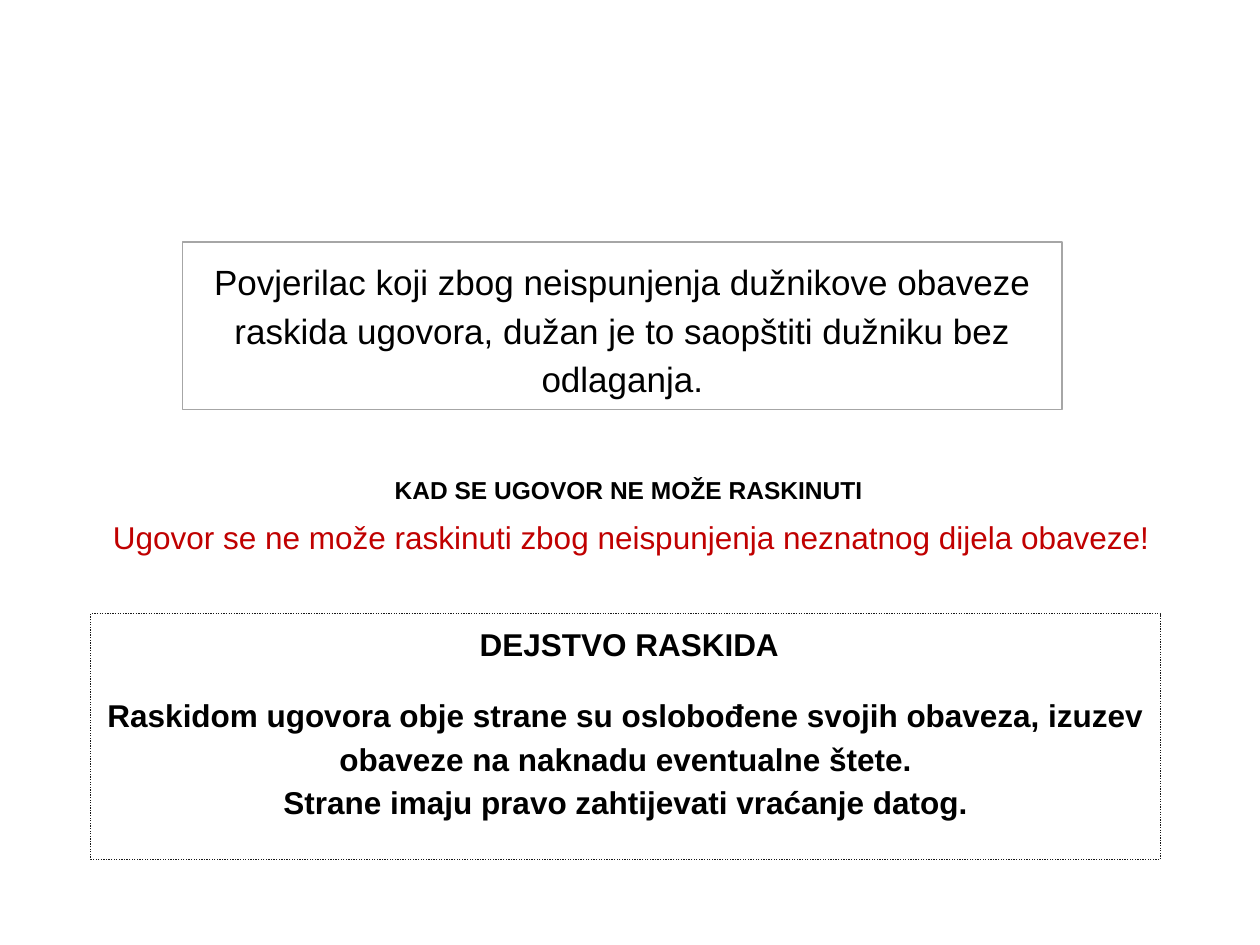
"""Build a slide on the termination of contracts."""
from dataclasses import dataclass

import pptx
import pptx.dml.color
import pptx.enum.dml
import pptx.enum.shapes
import pptx.enum.text
import pptx.oxml.ns
import pptx.util

Inches = pptx.util.Inches
Anchor = pptx.enum.text.MSO_ANCHOR


@dataclass(frozen=True)
class Theme:
    font: str = "Arial"
    ink: str = "000000"
    alert: str = "C00000"
    pale: str = "A6A6A6"
    dark: str = "191919"
    small: int = 14
    mid: int = 18
    large: int = 20
    line: float = 0.75
    inset: float = 0.1


@dataclass(frozen=True)
class Area:
    left: float
    top: float
    width: float
    height: float

    def lengths(self) -> list:
        return [Inches(n) for n in (self.left, self.top, self.width, self.height)]


THEME = Theme()


def tint(code: str):
    return pptx.dml.color.RGBColor.from_string(code)


def place(shape, area: Area) -> None:
    shape.left, shape.top, shape.width, shape.height = area.lengths()


def write(shape, *lines: str, size: int = THEME.mid, color: str = THEME.ink,
          bold: bool = False, anchor=Anchor.TOP, space: float = 1.15,
          head: float = THEME.inset) -> None:
    frame = shape.text_frame
    frame.word_wrap = True
    frame.auto_size = pptx.enum.text.MSO_AUTO_SIZE.NONE
    frame.vertical_anchor = anchor
    frame.margin_left = frame.margin_right = frame.margin_bottom = Inches(THEME.inset)
    frame.margin_top = Inches(head)
    frame.text = "\n".join(lines)
    for para in frame.paragraphs:
        para.alignment = pptx.enum.text.PP_ALIGN.CENTER
        para.line_spacing = space
        para.space_before = para.space_after = pptx.util.Pt(0)
        font = para.runs[0].font
        font.name, font.size, font.bold = THEME.font, pptx.util.Pt(size), bold
        font.color.rgb = tint(color)


def plain(shape) -> None:
    for para in shape.text_frame.paragraphs:
        props = para._p.get_or_add_pPr()
        props.set("marL", "0")
        props.set("indent", "0")
        props.append(props.makeelement(pptx.oxml.ns.qn("a:buNone"), {}))


def frame(slide, area: Area, color: str, dash=None):
    box = slide.shapes.add_shape(
        pptx.enum.shapes.MSO_SHAPE.RECTANGLE, *area.lengths())
    box.shadow.inherit = False
    box.fill.background()
    box.line.color.rgb = tint(color)
    box.line.width = pptx.util.Pt(THEME.line)
    if dash is not None:
        box.line.dash_style = dash
    return box


def main() -> None:
    deck = pptx.Presentation()
    deck.slide_width, deck.slide_height = Inches(10), Inches(7.5)
    slide = deck.slides.add_slide(deck.slide_layouts[1])

    title, body = slide.placeholders
    place(title, Area(1.55, 3.67, 6.88, 0.43))
    write(title, "KAD SE UGOVOR NE MOŽE RASKINUTI", size=THEME.small,
          bold=True, anchor=Anchor.BOTTOM, space=1)
    place(body, Area(0.21, 3.97, 9.6, 0.68))
    write(body, "Ugovor se ne može raskinuti zbog neispunjenja neznatnog "
          "dijela obaveze!", color=THEME.alert)
    plain(body)

    notice = frame(slide, Area(1.45, 1.92, 6.98, 1.33), THEME.pale)
    write(notice, "Povjerilac koji zbog neispunjenja dužnikove obaveze raskida "
          "ugovora, dužan je to saopštiti dužniku bez odlaganja.",
          size=THEME.large)

    effect = frame(slide, Area(0.72, 4.87, 8.49, 1.95), THEME.dark,
                   pptx.enum.dml.MSO_LINE.ROUND_DOT)
    write(effect, "Raskidom ugovora obje strane su oslobođene svojih obaveza, "
          "izuzev obaveze na naknadu eventualne štete.",
          "Strane imaju pravo zahtijevati vraćanje datog.",
          bold=True, head=0.61)

    label = slide.shapes.add_textbox(*Area(2.38, 4.73, 5.23, 0.63).lengths())
    write(label, "DEJSTVO RASKIDA", bold=True, anchor=Anchor.BOTTOM, space=1)

    deck.save("out.pptx")


if __name__ == "__main__":
    main()
